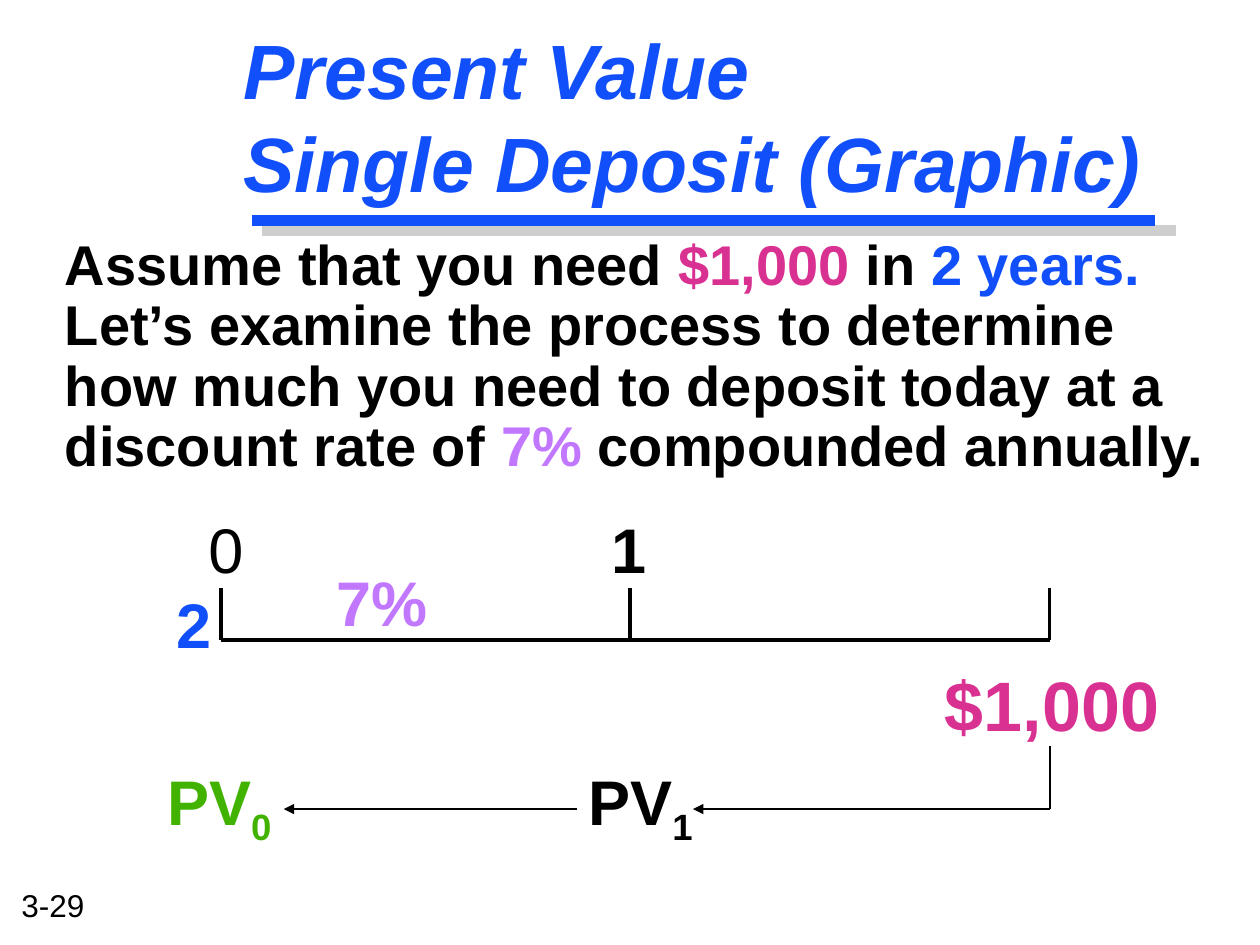
"""Build the slide on the present value of a single deposit."""
from dataclasses import dataclass
from typing import Optional

from lxml import etree
from pptx import Presentation
from pptx.dml.color import RGBColor
from pptx.enum.shapes import MSO_CONNECTOR
from pptx.enum.text import MSO_ANCHOR, MSO_AUTO_SIZE, PP_ALIGN
from pptx.oxml import parse_xml
from pptx.oxml.ns import nsdecls, qn
from pptx.util import Cm, Pt

STRAIGHT = MSO_CONNECTOR.STRAIGHT
LEFT = PP_ALIGN.LEFT
TOP, MIDDLE = MSO_ANCHOR.TOP, MSO_ANCHOR.MIDDLE
NO_FIT = MSO_AUTO_SIZE.NONE

BLACK, BLUE, GREY = "000000", "114FFB", "CECECE"
PINK, PURPLE, GREEN = "D93192", "C277FF", "42B200"
YEAR_POSITIONS = (4.45, 12.7, 21.16)
AXIS_TOP, AXIS_Y = 11.86, 12.9
ARROW_TOP, ARROW_Y = 15.04, 16.31


@dataclass
class Label:
    text: str
    left: float
    top: float
    width: float
    size: float
    color: str
    bold: bool = True
    subscript: Optional[str] = None


@dataclass
class Line:
    start: tuple[float, float]
    end: tuple[float, float]
    color: str = BLACK
    width: float = 2
    arrow: bool = False


LABELS = [
    Label("3-29", 0.18, 17.73, 2.2, 18, BLACK, bold=False),
    Label("0", 3.95, 10.16, 1.5, 36, BLACK, bold=False),
    Label("1", 12.07, 10.16, 1.5, 36, BLACK),
    Label("2", 3.3, 11.67, 1.5, 36, BLUE),
    Label("7%", 6.53, 11.23, 2.6, 36, PURPLE),
    Label("$1,000", 18.8, 13.21, 5.2, 40, PINK),
    Label("PV", 11.61, 15.24, 3, 36, BLACK, subscript="1"),
    Label("PV", 3.12, 15.24, 3, 36, GREEN, subscript="0"),
]

LINES = [
    Line((5.28, 4.65), (23.7, 4.65), GREY, 6),
    Line((5.08, 4.45), (23.29, 4.45), BLUE, 6),
    Line((YEAR_POSITIONS[0], AXIS_Y), (YEAR_POSITIONS[-1], AXIS_Y)),
    *(Line((x, AXIS_TOP), (x, AXIS_Y)) for x in YEAR_POSITIONS),
    Line((YEAR_POSITIONS[-1], ARROW_TOP), (YEAR_POSITIONS[-1], ARROW_Y), width=1),
    Line((13.97, ARROW_Y), (YEAR_POSITIONS[-1], ARROW_Y), width=1, arrow=True),
    Line((5.72, ARROW_Y), (11.63, ARROW_Y), width=1, arrow=True),
]

BODY = [
    ("Assume that you need ", BLACK),
    ("$1,000 ", PINK),
    ("in ", BLACK),
    ("2 years.", BLUE),
    (" Let’s examine the process to determine how much you need "
     "to deposit today at a discount rate of ", BLACK),
    ("7% ", PURPLE),
    ("compounded annually.", BLACK),
]


def rgb(color: str) -> RGBColor:
    """Turn a hex string into a colour."""
    return RGBColor.from_string(color)


def style_run(run, size: float, color: str, bold: bool = True) -> None:
    """Set the font of one run."""
    run.font.name = "Arial"
    run.font.size = Pt(size)
    run.font.bold = bold
    run.font.color.rgb = rgb(color)


def add_run(paragraph, text: str, size: float, color: str, bold: bool = True):
    """Append a formatted run to a paragraph."""
    run = paragraph.add_run()
    run.text = text
    style_run(run, size, color, bold)
    return run


def add_text_frame(slide, left: float, top: float, width: float, height: float):
    """Add a wrapping text box and return its frame."""
    box = slide.shapes.add_textbox(Cm(left), Cm(top), Cm(width), Cm(height))
    text_frame = box.text_frame
    text_frame.word_wrap = True
    text_frame.vertical_anchor = TOP
    return text_frame


def add_label(slide, label: Label) -> None:
    """Add a one-line label with an optional subscript."""
    height = label.size * 0.05
    text_frame = add_text_frame(slide, label.left, label.top, label.width, height)
    paragraph = text_frame.paragraphs[0]
    add_run(paragraph, label.text, label.size, label.color, label.bold)
    if label.subscript:
        run = add_run(paragraph, label.subscript, label.size, label.color, label.bold)
        run.font._element.set("baseline", "-25000")


def add_line(slide, line: Line) -> None:
    """Add a straight line with an optional arrowhead at its start."""
    connector = slide.shapes.add_connector(
        STRAIGHT, *(Cm(value) for value in line.start + line.end))
    connector.line.color.rgb = rgb(line.color)
    connector.line.width = Pt(line.width)
    if line.arrow:
        etree.SubElement(connector.line._get_or_add_ln(), qn("a:headEnd"), type="triangle")
    etree.SubElement(connector._element.spPr, qn("a:effectLst"))


def add_title(slide) -> None:
    """Place the title and give its letters a grey shadow."""
    title = slide.shapes.title
    title.left, title.top, title.width, title.height = (
        Cm(4.65), Cm(0.2), Cm(19.69), Cm(4.25))
    text_frame = title.text_frame
    text_frame.text = "Present Value\vSingle Deposit (Graphic)"
    text_frame.auto_size = NO_FIT
    text_frame.vertical_anchor = MIDDLE
    paragraph = text_frame.paragraphs[0]
    paragraph.alignment = LEFT
    for run in paragraph.runs:
        style_run(run, 44, BLUE)
        run.font.italic = True
        fill = run.font._element.find(qn("a:solidFill"))
        fill.addnext(parse_xml(
            f'<a:effectLst {nsdecls("a")}><a:outerShdw dist="53882" dir="2700000">'
            f'<a:srgbClr val="{GREY}"/></a:outerShdw></a:effectLst>'))


def add_body(slide) -> None:
    """Add the paragraph that states the problem."""
    paragraph = add_text_frame(slide, 1.06, 4.65, 23.5, 5.5).paragraphs[0]
    paragraph.line_spacing = 0.9
    for text, color in BODY:
        add_run(paragraph, text, 32, color)


def main() -> None:
    """Build and save the presentation."""
    presentation = Presentation()
    presentation.slide_width, presentation.slide_height = Cm(25.4), Cm(19.05)
    slide = presentation.slides.add_slide(presentation.slide_layouts[5])
    add_title(slide)
    add_body(slide)
    for line in LINES:
        add_line(slide, line)
    for label in LABELS:
        add_label(slide, label)
    presentation.save("out.pptx")


if __name__ == "__main__":
    main()
